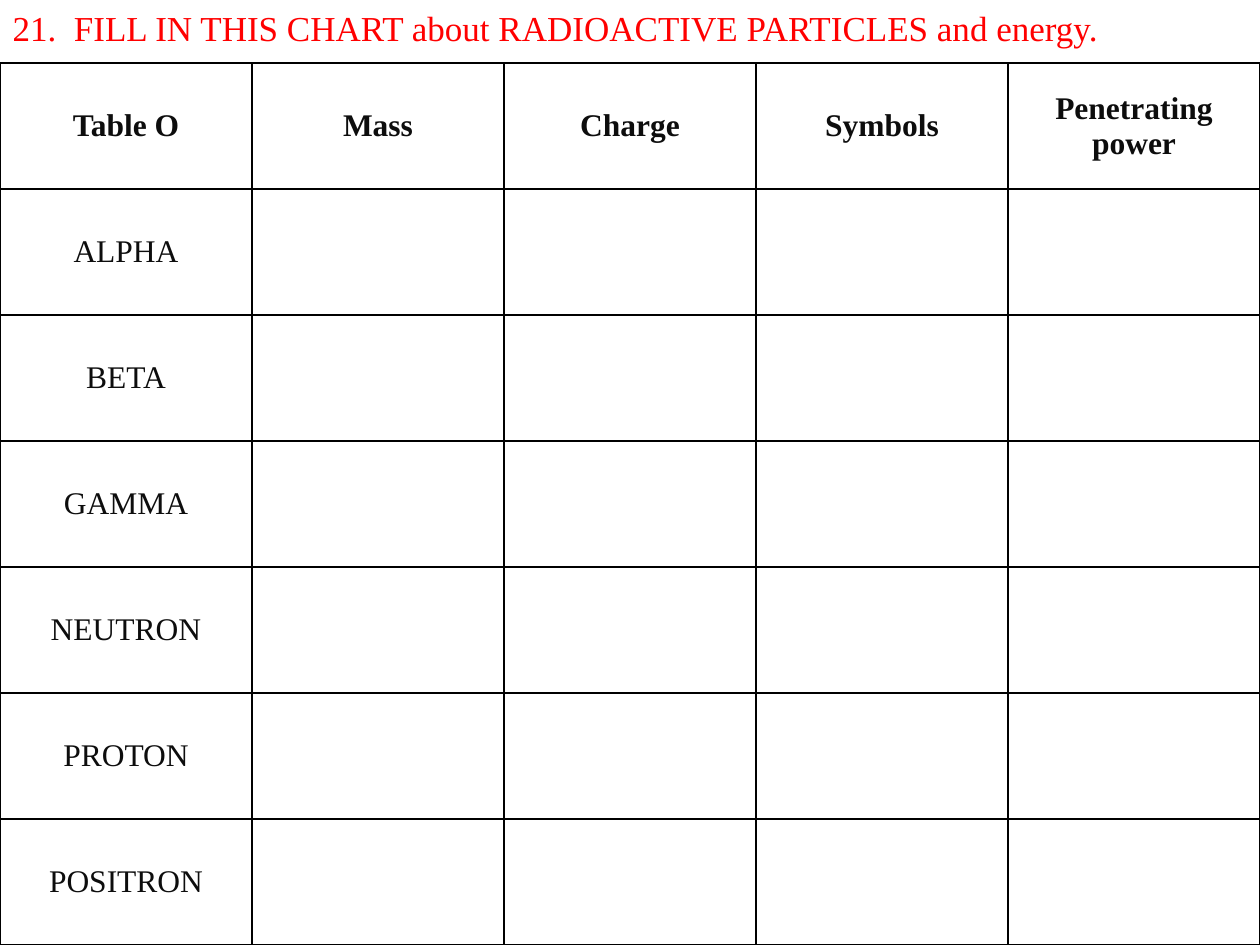
from dataclasses import dataclass

from lxml.etree import SubElement
from pptx import Presentation
from pptx.dml.color import RGBColor
from pptx.enum.text import MSO_ANCHOR, MSO_AUTO_SIZE, PP_ALIGN
from pptx.oxml.ns import qn
from pptx.util import Cm, Pt

RED = RGBColor(0xFF, 0x00, 0x00)
INK = RGBColor(0x0D, 0x0D, 0x0D)
BLACK = RGBColor(0x00, 0x00, 0x00)
WHITE = RGBColor(0xFF, 0xFF, 0xFF)
FONT = "Times New Roman"

PAGE_WIDTH, PAGE_HEIGHT = Cm(25.4), Cm(19.05)
TABLE_TOP = Cm(1.27)
TITLE = "21.  FILL IN THIS CHART about RADIOACTIVE PARTICLES and energy."
HEADINGS = ["Table O", "Mass", "Charge", "Symbols", "Penetrating power"]
PARTICLES = ["ALPHA", "BETA", "GAMMA", "NEUTRON", "PROTON", "POSITRON"]


@dataclass(frozen=True)
class TextStyle:
    size: int
    color: RGBColor
    bold: bool = False
    align: PP_ALIGN = PP_ALIGN.LEFT


TITLE_STYLE = TextStyle(20, RED)
HEADING_STYLE = TextStyle(18, INK, True, PP_ALIGN.CENTER)
PARTICLE_STYLE = TextStyle(18, INK, False, PP_ALIGN.CENTER)


def write_text(frame, text: str, style: TextStyle) -> None:
    frame.text = text
    para = frame.paragraphs[0]
    para.alignment = style.align
    for span in para.runs:
        span.font.name = FONT
        span.font.size = Pt(style.size)
        span.font.bold = style.bold
        span.font.color.rgb = style.color


def format_cell(cell) -> None:
    """Give a cell a black 1 pt border on each side and a white fill."""
    properties = cell._tc.get_or_add_tcPr()
    for side in ("a:lnL", "a:lnR", "a:lnT", "a:lnB"):
        line = SubElement(properties, qn(side), w=str(Pt(1)))
        line_fill = SubElement(line, qn("a:solidFill"))
        SubElement(line_fill, qn("a:srgbClr"), val=str(BLACK))
    cell.fill.solid()
    cell.fill.fore_color.rgb = WHITE
    cell.vertical_anchor = MSO_ANCHOR.MIDDLE


def add_title(page) -> None:
    title = page.shapes.title
    title.left, title.top = Cm(0), Cm(0)
    title.width, title.height = PAGE_WIDTH, Cm(1.11)
    frame = title.text_frame
    frame.word_wrap = True
    frame.auto_size = MSO_AUTO_SIZE.SHAPE_TO_FIT_TEXT
    frame.vertical_anchor = MSO_ANCHOR.TOP
    write_text(frame, TITLE, TITLE_STYLE)


def add_particle_table(page) -> None:
    table = page.shapes.add_table(
        len(PARTICLES) + 1, len(HEADINGS),
        Cm(0), TABLE_TOP, PAGE_WIDTH, PAGE_HEIGHT - TABLE_TOP,
    ).table
    for cell in table.iter_cells():
        format_cell(cell)
    for column, heading in enumerate(HEADINGS):
        write_text(table.cell(0, column).text_frame, heading, HEADING_STYLE)
    for row, particle in enumerate(PARTICLES, start=1):
        write_text(table.cell(row, 0).text_frame, particle, PARTICLE_STYLE)


def main() -> None:
    deck = Presentation()
    deck.slide_width, deck.slide_height = PAGE_WIDTH, PAGE_HEIGHT
    page = deck.slides.add_slide(deck.slide_layouts.get_by_name("Title Only"))
    add_title(page)
    add_particle_table(page)
    deck.save("out.pptx")


if __name__ == "__main__":
    main()
